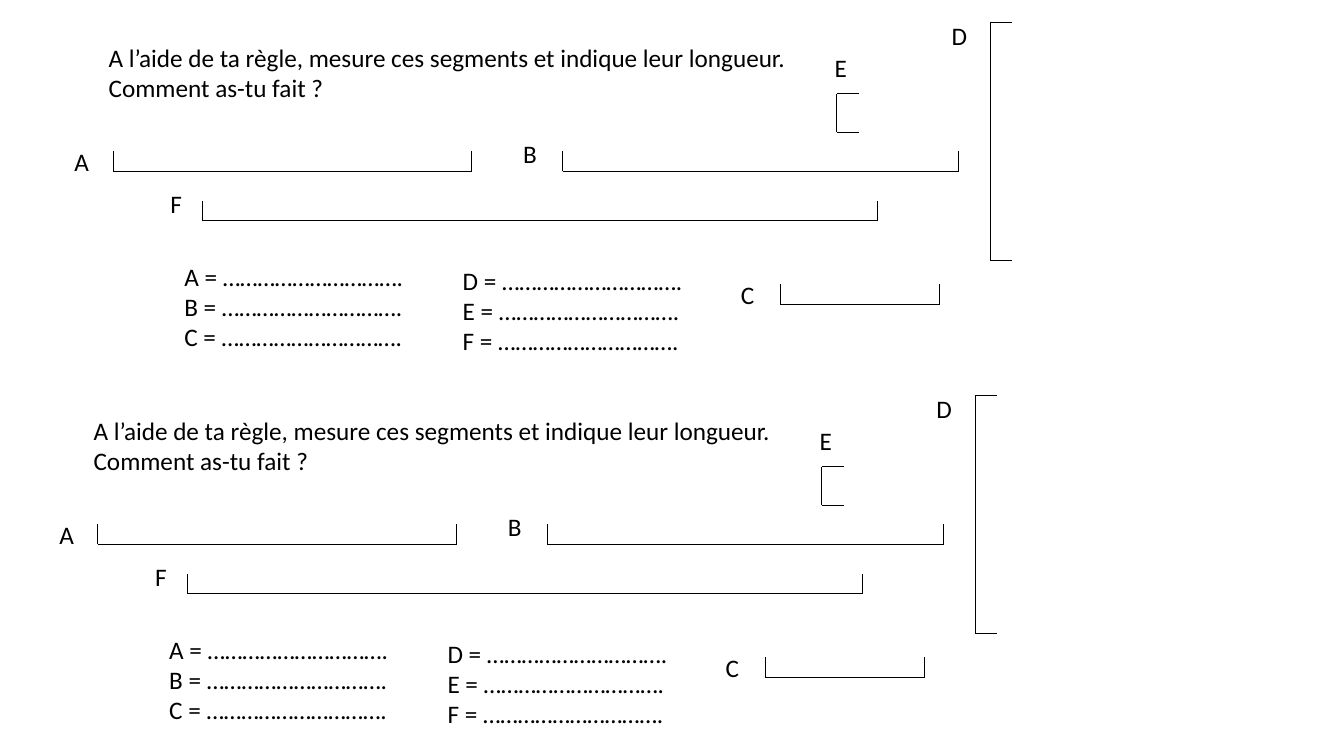
from dataclasses import dataclass

from lxml.etree import SubElement
from pptx import Presentation
from pptx.dml.color import RGBColor
from pptx.enum.shapes import MSO_CONNECTOR
from pptx.enum.text import MSO_AUTO_SIZE
from pptx.oxml.ns import qn
from pptx.shapes.group import GroupShape
from pptx.util import Inches, Pt


@dataclass(frozen=True)
class Theme:
    font: str = "Calibri"
    text_size: float = 18
    line_width: float = 0.5
    ink: RGBColor = RGBColor(0, 0, 0)


@dataclass(frozen=True)
class TextBlock:
    left: float
    top: float
    width: float
    height: float
    lines: tuple[str, ...]


@dataclass(frozen=True)
class Segment:
    """A segment to measure, with a tick of (tick_x, tick_y) at both ends."""
    name: TextBlock
    start: tuple[float, float]
    end: tuple[float, float]
    tick_x: float = 0
    tick_y: float = -0.2


@dataclass(frozen=True)
class Origin:
    x: float
    y: float


THEME = Theme()
DOTS = "…………………………."


def name_block(letter: str, left: float, top: float, width: float) -> TextBlock:
    return TextBlock(left, top, width, 0.4, (letter,))


def answer_block(letters: str, left: float, top: float, width: float) -> TextBlock:
    lines = tuple(f"{letter} = {DOTS}" for letter in letters)
    return TextBlock(left, top, width, 1.01, lines)


INSTRUCTION = TextBlock(0.98, 0.37, 7.06, 0.71, (
    "A l’aide de ta règle, mesure ces segments et indique leur longueur.",
    "Comment as-tu fait ?",
))
ANSWERS = (
    answer_block("ABC", 1.73, 2.54, 2.39),
    answer_block("DEF", 4.49, 2.58, 2.49),
)
SEGMENTS = (
    Segment(name_block("A", 0.64, 1.4, 0.35), (1.12, 1.7), (4.68, 1.7)),
    Segment(name_block("B", 5.09, 1.32, 0.34), (5.58, 1.7), (9.51, 1.7)),
    Segment(name_block("C", 7.25, 2.72, 0.34), (7.74, 3.02), (9.32, 3.02)),
    Segment(name_block("D", 9.34, 0.15, 0.36), (9.82, 0.22), (9.82, 2.58), 0.22, 0),
    Segment(name_block("E", 8.18, 0.47, 0.32), (8.3, 0.93), (8.3, 1.31), 0.22, 0),
    Segment(name_block("F", 1.59, 1.82, 0.32), (2.01, 2.19), (8.7, 2.19)),
)
# The exercise appears twice on the sheet
ORIGINS = (Origin(0, 0), Origin(-0.15, 3.7))


def draw_text(group: GroupShape, origin: Origin, block: TextBlock) -> None:
    shape = group.shapes.add_textbox(
        Inches(origin.x + block.left), Inches(origin.y + block.top),
        Inches(block.width), Inches(block.height))
    frame = shape.text_frame
    frame.word_wrap = False
    frame.auto_size = MSO_AUTO_SIZE.SHAPE_TO_FIT_TEXT
    for index, line in enumerate(block.lines):
        paragraph = frame.add_paragraph() if index else frame.paragraphs[0]
        run = paragraph.add_run()
        run.text = line
        run.font.name = THEME.font
        run.font.size = Pt(THEME.text_size)
        run.font.color.rgb = THEME.ink


def draw_line(group: GroupShape, origin: Origin,
              start: tuple[float, float], end: tuple[float, float]) -> None:
    connector = group.shapes.add_connector(
        MSO_CONNECTOR.STRAIGHT,
        Inches(origin.x + start[0]), Inches(origin.y + start[1]),
        Inches(origin.x + end[0]), Inches(origin.y + end[1]))
    connector.line.color.rgb = THEME.ink
    connector.line.width = Pt(THEME.line_width)
    SubElement(connector.element.spPr, qn("a:effectLst"))


def draw_segment(group: GroupShape, origin: Origin, segment: Segment) -> None:
    draw_text(group, origin, segment.name)
    draw_line(group, origin, segment.start, segment.end)
    for x, y in (segment.start, segment.end):
        draw_line(group, origin, (x, y), (x + segment.tick_x, y + segment.tick_y))


def main() -> None:
    presentation = Presentation()
    presentation.slide_width = Inches(13.33)
    presentation.slide_height = Inches(7.5)
    blank_layout = presentation.slide_layouts[6]
    slide = presentation.slides.add_slide(blank_layout)

    # One group per exercise: instruction, segments, answer lines
    for origin in ORIGINS:
        group = slide.shapes.add_group_shape()
        draw_text(group, origin, INSTRUCTION)
        for segment in SEGMENTS:
            draw_segment(group, origin, segment)
        for answers in ANSWERS:
            draw_text(group, origin, answers)

    presentation.save("out.pptx")


if __name__ == "__main__":
    main()
